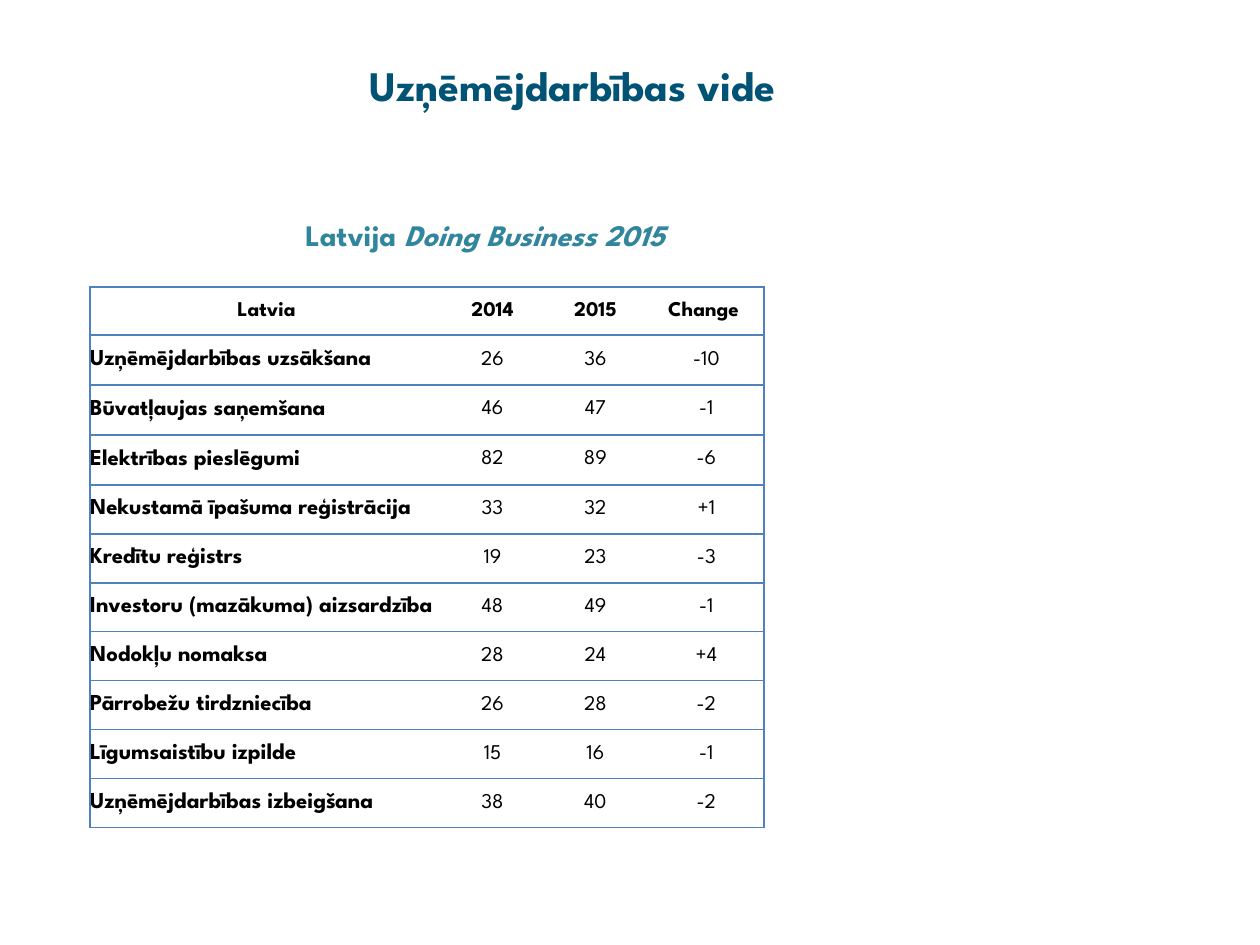
"""Build the Latvian business environment slide with its Doing Business table."""
from dataclasses import dataclass

from lxml.etree import SubElement
from pptx import Presentation
from pptx.dml.color import RGBColor
from pptx.enum.text import MSO_ANCHOR as Anchor, MSO_AUTO_SIZE as AutoSize, PP_ALIGN as Align
from pptx.oxml.ns import qn
from pptx.util import Pt

PX = 914400 / 126


def px(count):
    return round(count * PX)


@dataclass(frozen=True)
class Theme:
    font: str = "League Spartan"
    heading: str = "005374"
    caption: str = "31859C"
    ink: str = "000000"
    paper: str = "FFFFFF"
    rule: str = "4F81BD"
    heading_size: int = 24
    caption_size: int = 17
    label_size: int = 13
    value_size: int = 12


class SlideBuilder:
    def __init__(self, slide, theme):
        self.slide = slide
        self.theme = theme

    def style(self, paragraph, size, color, bold=True):
        for run in paragraph.runs:
            run.font.name = self.theme.font
            run.font.size = Pt(size)
            run.font.bold = bold
            run.font.color.rgb = RGBColor.from_string(color)

    def title(self, text, left, top, width, height):
        heading = self.slide.shapes.title
        heading.left, heading.top = px(left), px(top)
        heading.width, heading.height = px(width), px(height)
        frame = heading.text_frame
        frame.text = text
        frame.word_wrap = True
        frame.vertical_anchor = Anchor.TOP
        frame.paragraphs[0].alignment = Align.LEFT
        self.style(frame.paragraphs[0], self.theme.heading_size, self.theme.heading)

    def caption(self, plain, slanted, left, top, width, height):
        box = self.slide.shapes.add_textbox(px(left), px(top), px(width), px(height))
        frame = box.text_frame
        frame.word_wrap = False
        frame.auto_size = AutoSize.SHAPE_TO_FIT_TEXT
        line = frame.paragraphs[0]
        line.add_run().text = plain
        report = line.add_run()
        report.text = slanted
        self.style(line, self.theme.caption_size, self.theme.caption)
        report.font.italic = True

    def borders(self, cell, sides):
        properties = cell._tc.get_or_add_tcPr()
        for side in "LRTB":
            edge = SubElement(properties, qn(f"a:ln{side}"), w=str(Pt(1)))
            if side in sides:
                fill = SubElement(edge, qn("a:solidFill"))
                SubElement(fill, qn("a:srgbClr"), val=self.theme.rule)
            else:
                SubElement(edge, qn("a:noFill"))

    def cell(self, cell, text, is_header, is_label, sides):
        body_label = is_label and not is_header
        self.borders(cell, sides)
        cell.fill.solid()
        cell.fill.fore_color.rgb = RGBColor.from_string(self.theme.paper)
        cell.vertical_anchor = Anchor.MIDDLE
        cell.margin_left = cell.margin_right = px(0 if body_label else 9)
        cell.margin_top = cell.margin_bottom = 0
        cell.text_frame.text = text
        line = cell.text_frame.paragraphs[0]
        line.alignment = Align.LEFT if body_label else Align.CENTER
        if not is_header and not is_label:
            line.space_after = Pt(6)
        size = self.theme.label_size if body_label else self.theme.value_size
        self.style(line, size, self.theme.ink, bold=is_header or is_label)

    def table(self, rows, left, top, widths, heights):
        grid = self.slide.shapes.add_table(
            len(rows), len(widths), px(left), px(top), px(sum(widths)), px(sum(heights))
        ).table
        grid.first_row = grid.horz_banding = False
        for column, width in zip(grid.columns, widths):
            column.width = px(width)
        for row, height in zip(grid.rows, heights):
            row.height = px(height)
        last = len(widths) - 1
        for r, values in enumerate(rows):
            for c, value in enumerate(values):
                sides = "TB" + {0: "L", last: "R"}.get(c, "")
                self.cell(grid.cell(r, c), value, r == 0, c == 0, sides)


RANKINGS = [
    ("Latvia", "2014", "2015", "Change "),
    ("Uzņēmējdarbības uzsākšana", "26", "36", "-10"),
    ("Būvatļaujas saņemšana", "46", "47", "-1"),
    ("Elektrības pieslēgumi", "82", "89", "-6"),
    ("Nekustamā īpašuma reģistrācija", "33", "32", "+1"),
    ("Kredītu reģistrs", "19", "23", "-3"),
    ("Investoru (mazākuma) aizsardzība", "48", "49", "-1"),
    ("Nodokļu nomaksa", "28", "24", "+4"),
    ("Pārrobežu tirdzniecība", "26", "28", "-2"),
    ("Līgumsaistību izpilde", "15", "16", "-1"),
    ("Uzņēmējdarbības izbeigšana", "38", "40", "-2"),
]


def main():
    deck = Presentation()
    deck.slide_width, deck.slide_height = px(1260), px(945)
    builder = SlideBuilder(deck.slides.add_slide(deck.slide_layouts[5]), Theme())
    builder.title("Uzņēmējdarbības vide", 357, 53, 840, 142)
    builder.table(RANKINGS, 90, 287, [353, 99, 107, 115], [48] + [50] * 3 + [49] * 7)
    builder.caption("Latvija ", "Doing Business 2015", 293, 211, 417, 49)
    deck.save("out.pptx")


if __name__ == "__main__":
    main()
